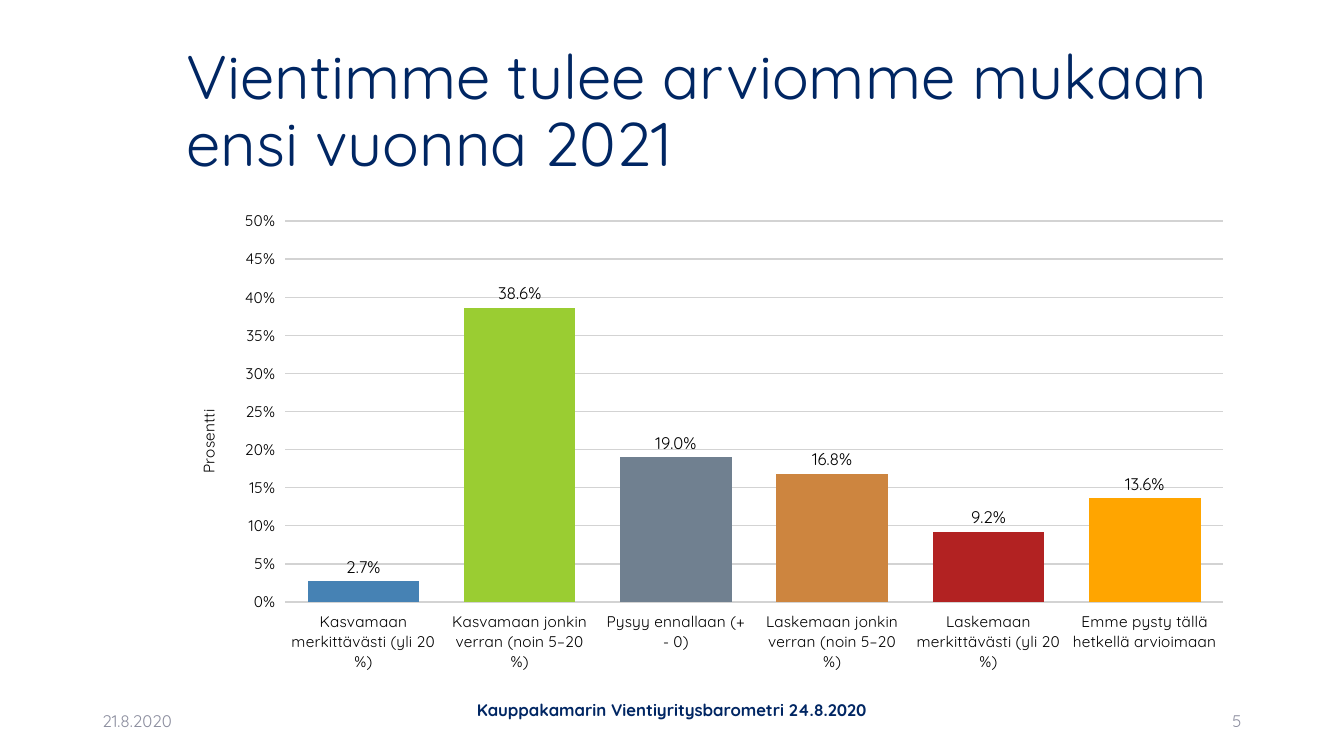
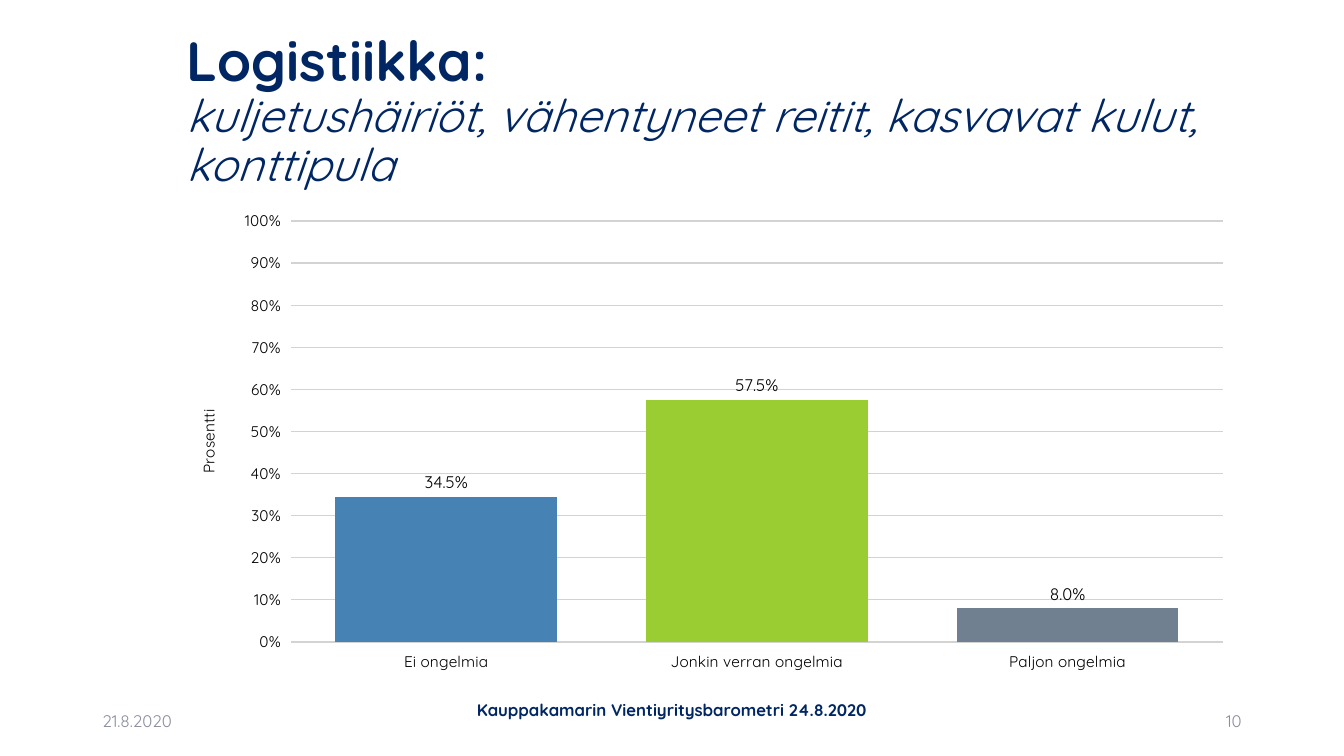
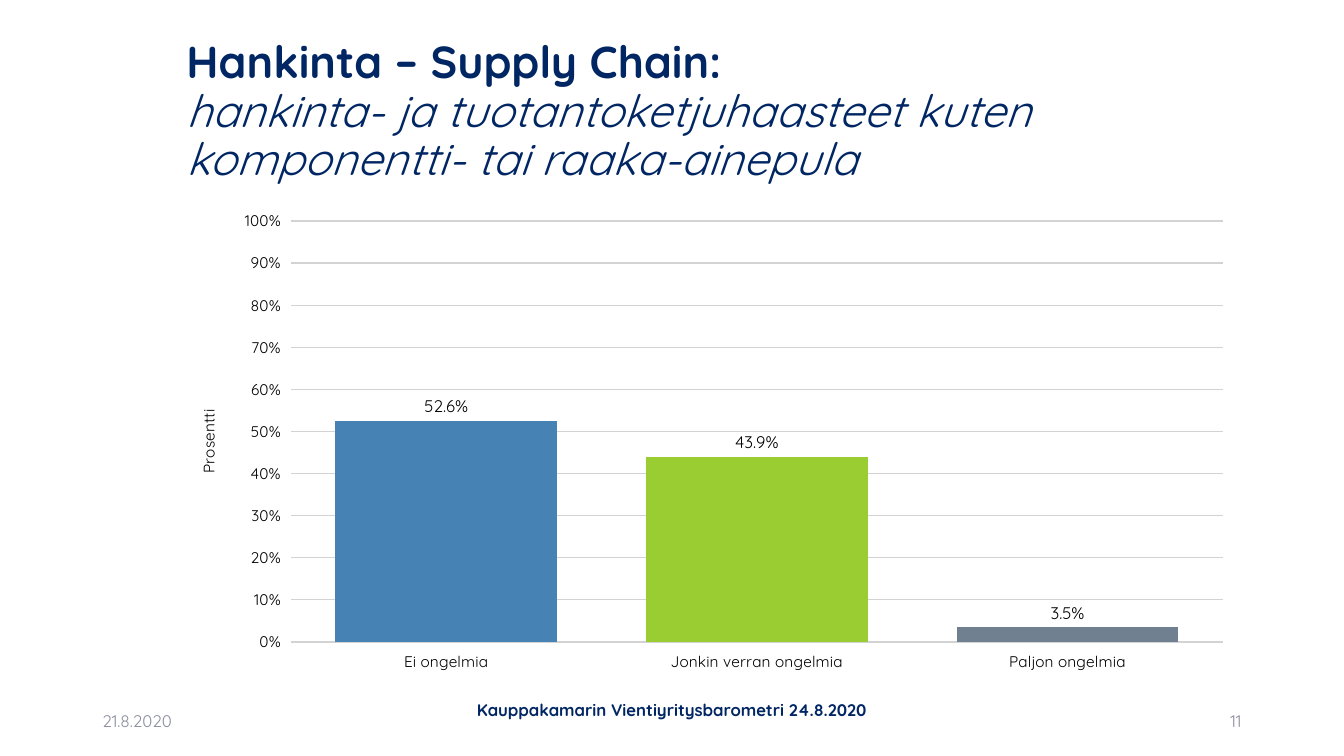
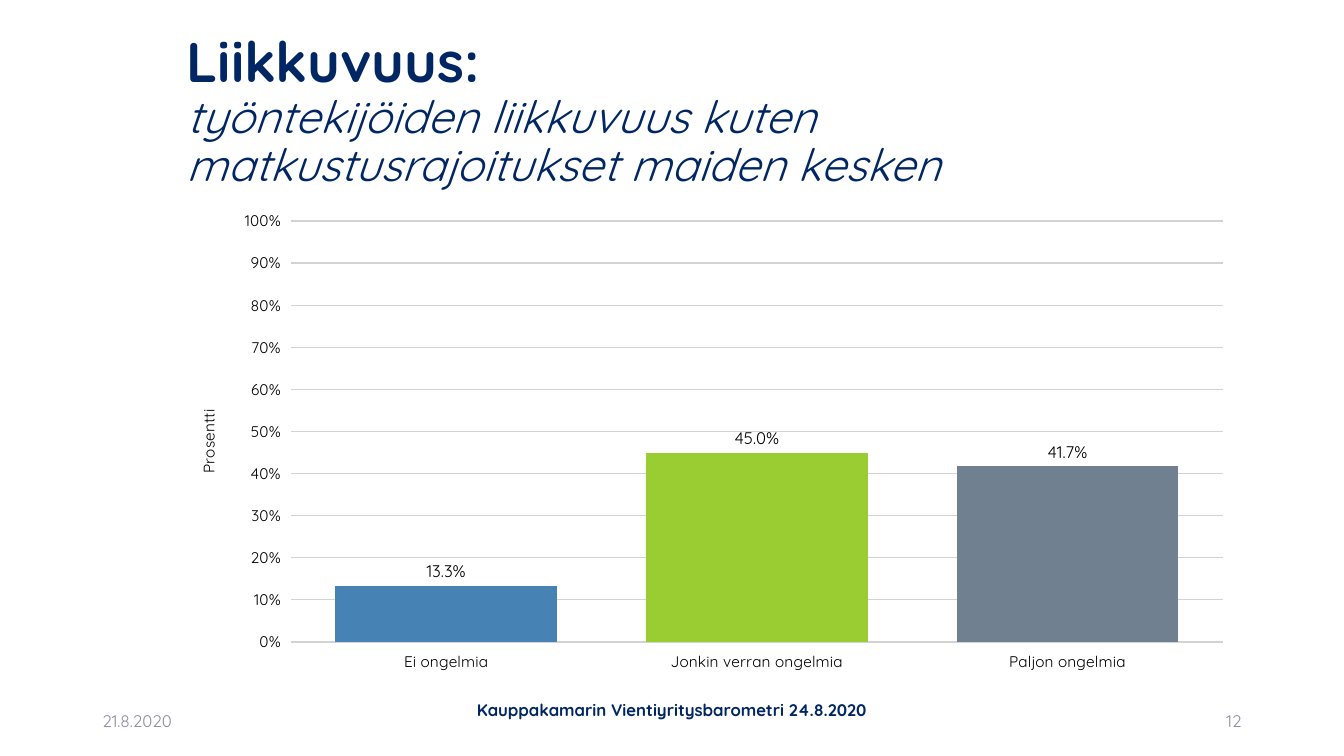
import copy
import dataclasses

import pptx
import pptx.chart.data
import pptx.dml.color
import pptx.enum.chart
import pptx.enum.text
import pptx.util

PX = 9525
FONT = "Quicksand"
TITLE_ONLY_LAYOUT = 5
COLOURS = {
    "navy": "002663",
    "muted": "8C8E9F",
    "text": "000000",
    "grid": "D3D3D3",
}
BAR_COLOURS = {
    "blue": "4682B4",
    "green": "9ACD32",
    "slate": "708090",
    "copper": "CD853F",
    "red": "B22222",
    "orange": "FFA500",
}
ALIGN = pptx.enum.text.PP_ALIGN


@dataclasses.dataclass(frozen=True)
class Area:
    left: int
    top: int
    width: int
    height: int

    def emu(self) -> tuple[int, ...]:
        return tuple(side * PX for side in dataclasses.astuple(self))


@dataclasses.dataclass(frozen=True)
class Span:
    text: str
    size: float
    colour: str = COLOURS["navy"]
    bold: bool = False
    italic: bool = False


@dataclasses.dataclass(frozen=True)
class Footer:
    area: Area
    span: Span
    align: ALIGN


@dataclasses.dataclass(frozen=True)
class Survey:
    number: int
    title: tuple[Span, ...]
    values: tuple[float, ...]
    categories: tuple[str, ...] = (
        "Ei ongelmia",
        "Jonkin verran ongelmia",
        "Paljon ongelmia",
    )
    maximum: float = 1.0
    step: float = 0.1


TITLE_AREA = Area(168, 38, 1017, 139)
CHART_AREA = Area(168, 192, 1017, 457)
SHARED_FOOTERS = (
    Footer(Area(88, 667, 288, 38), Span("21.8.2020", 12, COLOURS["muted"]), ALIGN.LEFT),
    Footer(
        Area(424, 657, 432, 38),
        Span("Kauppakamarin Vientiyritysbarometri 24.8.2020", 12, bold=True),
        ALIGN.CENTER,
    ),
)
NUMBER_AREA = Area(904, 667, 288, 38)

SURVEYS = (
    Survey(
        5,
        (Span("Vientimme tulee arviomme mukaan ensi vuonna 2021", 44),),
        (0.027, 0.386, 0.19, 0.168, 0.092, 0.136),
        (
            "Kasvamaan merkittävästi (yli 20 %)",
            "Kasvamaan jonkin verran (noin 5–20 %)",
            "Pysyy ennallaan (+ - 0)",
            "Laskemaan jonkin verran (noin 5–20 %)",
            "Laskemaan merkittävästi (yli 20 %)",
            "Emme pysty tällä hetkellä arvioimaan",
        ),
        0.5,
        0.05,
    ),
    Survey(
        10,
        (
            Span("Logistiikka:", 39.6, bold=True),
            Span(
                "kuljetushäiriöt, vähentyneet reitit, kasvavat kulut, konttipula",
                32.4,
                italic=True,
            ),
        ),
        (0.345, 0.575, 0.08),
    ),
    Survey(
        11,
        (
            Span("Hankinta – Supply Chain:", 32, bold=True),
            Span(
                "hankinta- ja tuotantoketjuhaasteet kuten komponentti- tai raaka-ainepula",
                32,
                italic=True,
            ),
        ),
        (0.526, 0.439, 0.035),
    ),
    Survey(
        12,
        (
            Span("Liikkuvuus:", 40, bold=True),
            Span(
                "työntekijöiden liikkuvuus kuten matkustusrajoitukset maiden kesken",
                32,
                italic=True,
            ),
        ),
        (0.133, 0.45, 0.417),
    ),
)


def rgb(colour: str) -> pptx.dml.color.RGBColor:
    return pptx.dml.color.RGBColor.from_string(colour)


def style_font(font, size: float, colour: str, bold: bool = False, italic: bool = False) -> None:
    font.name = FONT
    font.size = pptx.util.Pt(size)
    font.color.rgb = rgb(colour)
    font.bold = bold
    font.italic = italic


def add_span(para, span: Span):
    run = para.add_run()
    run.text = span.text
    style_font(run.font, span.size, span.colour, span.bold, span.italic)
    return run


def prepare_frame(frame) -> None:
    frame.word_wrap = True
    frame.auto_size = pptx.enum.text.MSO_AUTO_SIZE.NONE
    frame.vertical_anchor = pptx.enum.text.MSO_ANCHOR.MIDDLE


def write_title(page, spans: tuple[Span, ...]) -> None:
    title = page.shapes.title
    title.left, title.top, title.width, title.height = TITLE_AREA.emu()
    prepare_frame(title.text_frame)
    para = title.text_frame.paragraphs[0]
    para.alignment = ALIGN.LEFT
    para.line_spacing = 0.9
    run = add_span(para, spans[0])
    for span in spans[1:]:
        para.add_line_break()
        para._p[-1].append(copy.deepcopy(run._r.rPr))
        run = add_span(para, span)


def add_footer(page, footer: Footer) -> None:
    box = page.shapes.add_textbox(*footer.area.emu())
    prepare_frame(box.text_frame)
    para = box.text_frame.paragraphs[0]
    para.alignment = footer.align
    add_span(para, footer.span)


def style_axes(chart, survey: Survey) -> None:
    for axis in (chart.category_axis, chart.value_axis):
        axis.format.line.fill.background()
        axis.major_tick_mark = pptx.enum.chart.XL_TICK_MARK.OUTSIDE
        style_font(axis.tick_labels.font, 11, COLOURS["text"])
    axis = chart.value_axis
    axis.minimum_scale = 0
    axis.maximum_scale = survey.maximum
    axis.major_unit = survey.step
    axis.tick_labels.number_format = "0%"
    axis.tick_labels.number_format_is_linked = False
    axis.has_major_gridlines = True
    axis.major_gridlines.format.line.color.rgb = rgb(COLOURS["grid"])
    axis.major_gridlines.format.line.width = pptx.util.Pt(1)
    frame = axis.axis_title.text_frame
    frame._txBody.bodyPr.set("rot", "-5400000")
    frame._txBody.bodyPr.set("vert", "horz")
    add_span(frame.paragraphs[0], Span("Prosentti", 11, COLOURS["text"]))


def add_survey_chart(page, survey: Survey) -> None:
    data = pptx.chart.data.CategoryChartData(number_format="0.0%")
    data.categories = survey.categories
    data.add_series("Series 1", survey.values)
    chart = page.shapes.add_chart(
        pptx.enum.chart.XL_CHART_TYPE.COLUMN_CLUSTERED, *CHART_AREA.emu(), data
    ).chart
    chart.has_title = False
    chart.has_legend = False
    style_font(chart.font, 11, COLOURS["text"])
    style_axes(chart, survey)
    plot = chart.plots[0]
    plot.gap_width = 40
    plot.vary_by_categories = False
    series = plot.series[0]
    for index, colour in zip(range(len(survey.values)), BAR_COLOURS.values()):
        fill = series.points[index].format.fill
        fill.solid()
        fill.fore_color.rgb = rgb(colour)
    labels = series.data_labels
    labels.show_value = True
    labels.position = pptx.enum.chart.XL_LABEL_POSITION.OUTSIDE_END
    labels.number_format = "0.0%"
    labels.number_format_is_linked = False
    style_font(labels.font, 12, COLOURS["text"])


def add_page(deck, survey: Survey) -> None:
    page = deck.slides.add_slide(deck.slide_layouts[TITLE_ONLY_LAYOUT])
    write_title(page, survey.title)
    number = Span(str(survey.number), 12, COLOURS["muted"])
    for footer in (*SHARED_FOOTERS, Footer(NUMBER_AREA, number, ALIGN.RIGHT)):
        add_footer(page, footer)
    add_survey_chart(page, survey)


def main() -> None:
    deck = pptx.Presentation()
    deck.slide_width = 1280 * PX
    deck.slide_height = 720 * PX
    for survey in SURVEYS:
        add_page(deck, survey)
    deck.save("out.pptx")


if __name__ == "__main__":
    main()
